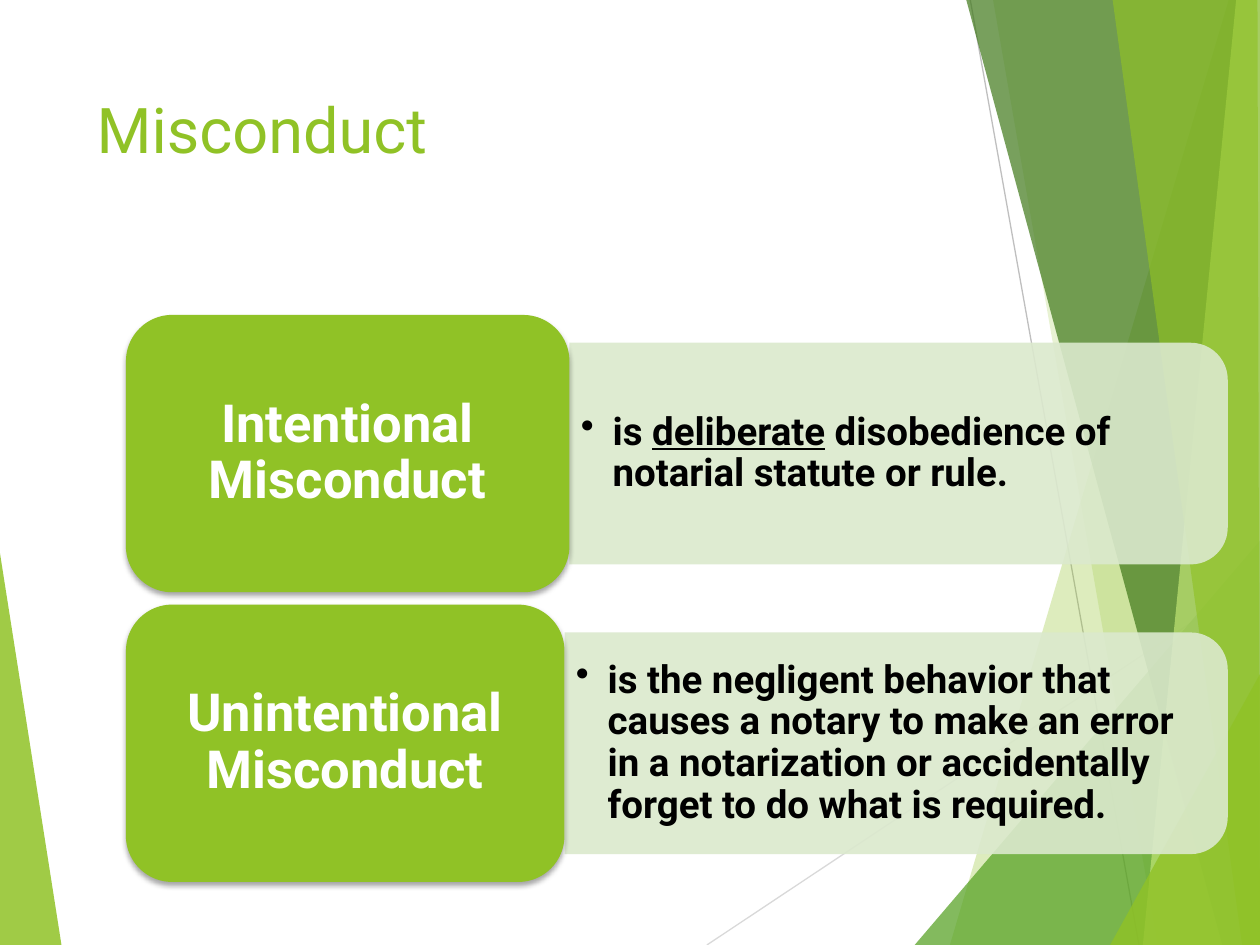
import pptx
import pptx.util
import pptx.dml.color
import pptx.enum.shapes
import pptx.enum.text
import pptx.oxml
import pptx.oxml.ns

Cm = pptx.util.Cm
Pt = pptx.util.Pt
SHAPES = pptx.enum.shapes.MSO_SHAPE
ANCHOR = pptx.enum.text.MSO_ANCHOR
ALIGN = pptx.enum.text.PP_ALIGN

FONT = "Roboto"
COLORS = {
    "green": "90C226", "mid_green": "54A021", "dark_green": "3F7819",
    "lime": "C0E474", "panel": "DBE9CD", "light_gray": "D9D9D9",
    "gray": "BFBFBF", "white": "FFFFFF", "black": "000000",
}
WIDTH, HEIGHT = 25.4, 19.05

# Background lines: start, end, color
LINES = [
    ((14.25, HEIGHT), (WIDTH, 11.63), "light_gray"),
    ((19.56, 0), (22.96, HEIGHT), "gray"),
]
# Background facets from back to front: corners, color, opacity in percent
BOTTOM_RIGHT, TOP_RIGHT = (WIDTH, HEIGHT), (WIDTH, 0)
FACETS = [
    ([(24.77, 0), (19.15, HEIGHT), BOTTOM_RIGHT, TOP_RIGHT], "green", 30),
    ([(20.02, 0), (23.34, HEIGHT), BOTTOM_RIGHT, TOP_RIGHT], "green", 20),
    ([(18.44, HEIGHT), (WIDTH, 10.9), BOTTOM_RIGHT], "mid_green", 72),
    ([(19.48, 0), (24.64, HEIGHT), BOTTOM_RIGHT, TOP_RIGHT], "dark_green", 70),
    ([(24.92, 0), (23.04, HEIGHT), BOTTOM_RIGHT, TOP_RIGHT], "lime", 70),
    ([(22.43, 0), (25.04, HEIGHT), BOTTOM_RIGHT, (25.35, 0)], "green", 65),
    ([(22.38, HEIGHT), (WIDTH, 13.59), BOTTOM_RIGHT], "green", 80),
]
LEFT_FACET = ([(0, 11.15), (1.24, HEIGHT), (0, HEIGHT)], "green", 85)

# Rows: card width, card text, description runs as (text, underlined)
ROWS = [
    (8.94, "Intentional Misconduct",
     [("is ", False), ("deliberate", True),
      (" disobedience of notarial statute or rule.", False)]),
    (8.84, "Unintentional Misconduct",
     [("is the negligent behavior that causes a notary to make an error in a "
       "notarization or accidentally forget to do what is required.", False)]),
]
CARD_LEFT, CARD_TOP, CARD_HEIGHT, ROW_STEP = 2.54, 6.35, 5.59, 5.84
PANEL_RIGHT, PANEL_HEIGHT = 24.75, 4.47


def rgb(name):
    return pptx.dml.color.RGBColor.from_string(COLORS[name])


def add_xml(parent, tag, content="", attributes=""):
    namespace = pptx.oxml.ns.nsdecls("a")
    element = pptx.oxml.parse_xml(
        f"<a:{tag} {namespace} {attributes}>{content}</a:{tag}>")
    parent.append(element)


def paint(shape, color, opacity=100):
    shape.shadow.inherit = False
    shape.line.fill.background()
    shape.fill.solid()
    shape.fill.fore_color.rgb = rgb(color)
    if opacity < 100:
        fill = shape._element.spPr.find(pptx.oxml.ns.qn("a:solidFill"))
        add_xml(fill[0], "alpha", attributes=f'val="{opacity * 1000}"')


def add_run(paragraph, text, size, color, bold=True, underline=False):
    run = paragraph.add_run()
    run.text = text
    font = run.font
    font.name, font.size, font.bold = FONT, Pt(size), bold
    font.color.rgb = rgb(color)
    if underline:
        font.underline = True


def set_frame(frame, anchor, horizontal, vertical):
    frame.word_wrap = True
    frame.auto_size = pptx.enum.text.MSO_AUTO_SIZE.NONE
    frame.vertical_anchor = anchor
    frame.margin_left = frame.margin_right = Cm(horizontal)
    frame.margin_top = frame.margin_bottom = Cm(vertical)


def add_facet(slide, corners, color, opacity):
    points = [(Cm(x), Cm(y)) for x, y in corners]
    builder = slide.shapes.build_freeform(*points[0])
    builder.add_line_segments(points[1:], close=True)
    paint(builder.convert_to_shape(), color, opacity)


def add_line(slide, start, end, color):
    line = slide.shapes.add_connector(
        pptx.enum.shapes.MSO_CONNECTOR.STRAIGHT,
        *(Cm(value) for value in start + end))
    line.line.color.rgb = rgb(color)
    line.line.width = Pt(0.75)
    add_xml(line._element.spPr, "effectLst")


def add_title(slide, text):
    title = slide.shapes.title
    slide.shapes._spTree.append(title._element)  # in front of the facets
    title.left, title.top = Cm(1.7), Cm(1.7)
    title.width, title.height = Cm(17.63), Cm(3.66)
    set_frame(title.text_frame, ANCHOR.TOP, 0.25, 0.13)
    paragraph = title.text_frame.paragraphs[0]
    paragraph.alignment = ALIGN.LEFT
    add_run(paragraph, text, 36, "green", bold=False)


def add_panel(slide, left, top):
    # A quarter turn puts the two rounded corners on the right
    length = PANEL_RIGHT - left
    offset = (length - PANEL_HEIGHT) / 2
    panel = slide.shapes.add_shape(
        SHAPES.ROUND_2_SAME_RECTANGLE, Cm(left + offset), Cm(top - offset),
        Cm(PANEL_HEIGHT), Cm(length))
    panel.rotation = 90
    paint(panel, "panel", 90)


def add_description(slide, left, top, runs):
    inset = 0.22
    box = slide.shapes.add_textbox(
        Cm(left), Cm(top + inset), Cm(PANEL_RIGHT - left - inset),
        Cm(PANEL_HEIGHT - 2 * inset))
    set_frame(box.text_frame, ANCHOR.MIDDLE, 0.23, 0.12)
    paragraph = box.text_frame.paragraphs[0]
    paragraph.line_spacing = 0.9
    properties = paragraph._p.get_or_add_pPr()
    properties.set("marL", str(Cm(0.64)))
    properties.set("indent", str(-Cm(0.64)))
    add_xml(properties, "buChar", attributes='char="•"')
    for text, underline in runs:
        add_run(paragraph, text, 22, "black", underline=underline)


def add_card(slide, top, width, text):
    card = slide.shapes.add_shape(
        SHAPES.ROUNDED_RECTANGLE, Cm(CARD_LEFT), Cm(top), Cm(width), Cm(CARD_HEIGHT))
    paint(card, "green")
    effects = card._element.spPr.find(pptx.oxml.ns.qn("a:effectLst"))
    add_xml(effects, "outerShdw",
            f'<a:srgbClr val="{COLORS["black"]}"><a:alpha val="35000"/></a:srgbClr>',
            f'blurRad="{Pt(3)}" dist="{Pt(2)}" dir="5400000" rotWithShape="0"')
    set_frame(card.text_frame, ANCHOR.MIDDLE, 0.3, 0.15)
    paragraph = card.text_frame.paragraphs[0]
    paragraph.alignment = ALIGN.CENTER
    paragraph.line_spacing = 0.9
    add_run(paragraph, text, 30, "white")


def main():
    presentation = pptx.Presentation()
    presentation.slide_width, presentation.slide_height = Cm(WIDTH), Cm(HEIGHT)
    slide = presentation.slides.add_slide(presentation.slide_layouts[5])

    # Background
    add_facet(slide, *LEFT_FACET)
    for line in LINES:
        add_line(slide, *line)
    for facet in FACETS:
        add_facet(slide, *facet)

    add_title(slide, "Misconduct")

    # Cards with their descriptions
    for index, (width, name, runs) in enumerate(ROWS):
        top = CARD_TOP + index * ROW_STEP
        panel_left = CARD_LEFT + width
        panel_top = top + (CARD_HEIGHT - PANEL_HEIGHT) / 2
        add_panel(slide, panel_left, panel_top)
        add_description(slide, panel_left, panel_top, runs)
        add_card(slide, top, width, name)

    presentation.save("out.pptx")


if __name__ == "__main__":
    main()
